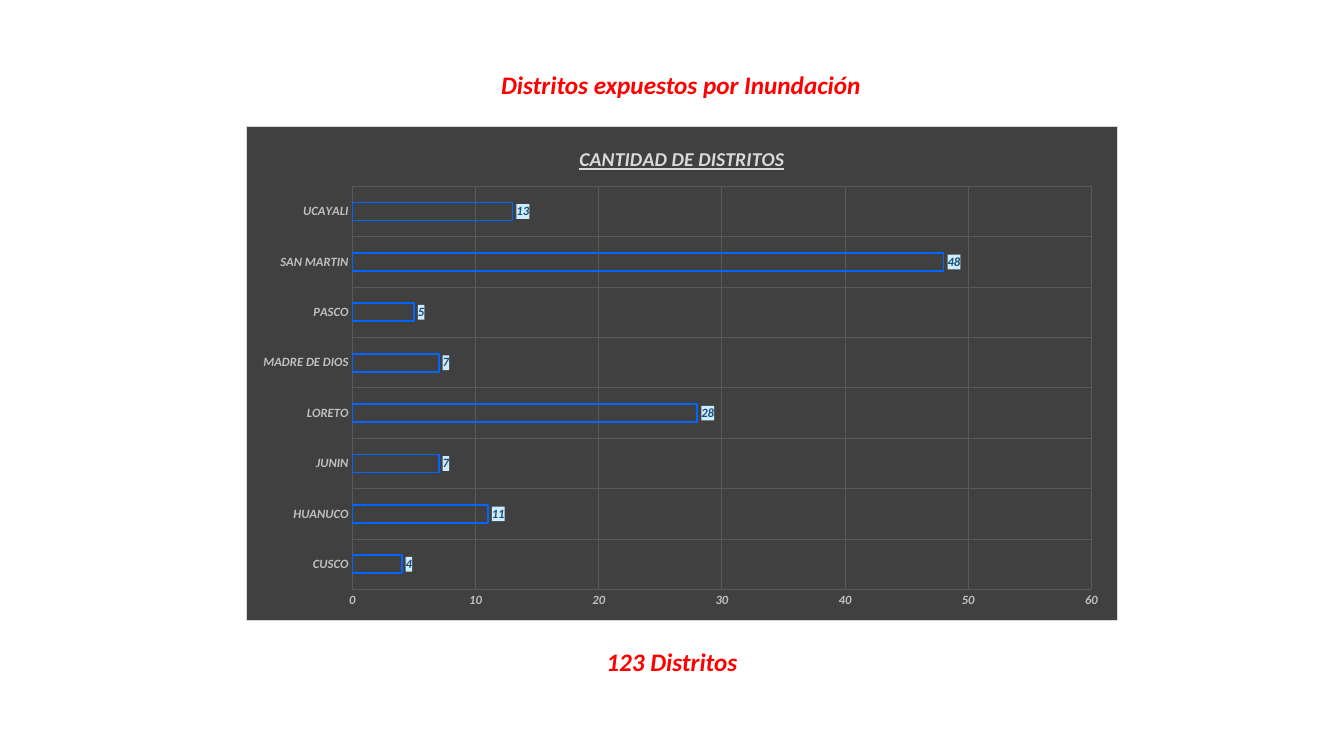
import pptx
import pptx.chart.data
import pptx.dml.color
import pptx.enum.chart
import pptx.enum.text
import pptx.oxml
import pptx.oxml.ns
import pptx.util

CHART_TITLE = "CANTIDAD DE DISTRITOS"
DISTRICTS = {
    "CUSCO": 4, "HUANUCO": 11, "JUNIN": 7, "LORETO": 28,
    "MADRE DE DIOS": 7, "PASCO": 5, "SAN MARTIN": 48, "UCAYALI": 13,
}
# text, (left, top, width, height) in px, wraps
HEADINGS = [
    ("Distritos expuestos por Inundación", (489, 64, 384, 40), False),
    ("123 Distritos", (596, 641, 152, 40), True),
]
CHART_BOX = (246, 126, 872, 495)
PLOT_BOX = (352, 186, 740, 404)
PAGE_SIZE = (1344, 756)
EMU_PER_PX = 914400 / 100.8

THEME = {
    "font": "Calibri",
    "heading": "FF0000", "heading_size": 18,
    "title": "D9D9D9", "title_size": 14,
    "axis": "BFBFBF", "small_size": 9, "chart_size": 10,
    "panel": "404040", "border": "D9D9D9", "grid": "595959",
    "bar": "0066FF", "value": "1F4E79", "value_back": "CCECFF",
}


def emu(px):
    return pptx.util.Emu(round(px * EMU_PER_PX))


def rgb(name):
    return pptx.dml.color.RGBColor.from_string(THEME[name])


def style_font(font, color, size):
    font.name = THEME["font"]
    font.size = pptx.util.Pt(THEME[size])
    font.bold = font.italic = True
    font.color.rgb = rgb(color)


def style_line(line, color, width):
    line.color.rgb = rgb(color)
    line.width = pptx.util.Pt(width)


def chart_xml(tag, content):
    return pptx.oxml.parse_xml(
        f"<c:{tag} {pptx.oxml.ns.nsdecls('c', 'a')}>{content}</c:{tag}>")


def solid(name):
    return f'<a:solidFill><a:srgbClr val="{THEME[name]}"/></a:solidFill>'


def add_heading(page, text, place, wraps):
    box = page.shapes.add_textbox(*map(emu, place))
    frame = box.text_frame
    frame.word_wrap = wraps
    frame.auto_size = pptx.enum.text.MSO_AUTO_SIZE.SHAPE_TO_FIT_TEXT
    para = frame.paragraphs[0]
    para.alignment = pptx.enum.text.PP_ALIGN.CENTER
    span = para.add_run()
    span.text = text
    style_font(span.font, "heading", "heading_size")


def style_axis(axis):
    axis.has_major_gridlines = True
    style_line(axis.major_gridlines.format.line, "grid", 0.75)
    axis.major_tick_mark = pptx.enum.chart.XL_TICK_MARK.NONE
    axis.minor_tick_mark = pptx.enum.chart.XL_TICK_MARK.NONE
    axis.format.line.fill.background()
    style_font(axis.tick_labels.font, "axis", "small_size")


def place_plot(chart):
    """Fix the inner plot area as fractions of the chart frame."""
    left, top, width, height = CHART_BOX
    x, y, plot_width, plot_height = PLOT_BOX
    shares = {"x": (x - left) / width, "y": (y - top) / height,
              "w": plot_width / width, "h": plot_height / height}
    modes = "".join(f'<c:{key}Mode val="edge"/>' for key in "xy")
    sizes = "".join(f'<c:{key} val="{share:.4f}"/>' for key, share in shares.items())
    area = chart.element.chart.plotArea
    for layout in area.findall(pptx.oxml.ns.qn("c:layout")):
        area.remove(layout)
    area.insert(0, chart_xml("layout", '<c:manualLayout><c:layoutTarget val="inner"/>'
                             f"{modes}{sizes}</c:manualLayout>"))


def style_series(plot):
    plot.gap_width, plot.overlap = 182, -50
    plot.vary_by_categories = False
    series = plot.series[0]
    series.invert_if_negative = False
    series.format.fill.background()
    style_line(series.format.line, "bar", 1.25)
    labels = series.data_labels
    labels.show_value = True
    labels.number_format, labels.number_format_is_linked = "#,##0", False
    labels.position = pptx.enum.chart.XL_LABEL_POSITION.OUTSIDE_END
    style_font(labels.font, "value", "small_size")
    text_part = series._element.find(".//" + pptx.oxml.ns.qn("c:dLbls")).find(
        pptx.oxml.ns.qn("c:txPr"))
    text_part.addprevious(chart_xml("spPr", solid("value_back")))


def add_district_chart(page):
    data = pptx.chart.data.CategoryChartData(number_format="#,##0")
    data.categories = list(DISTRICTS)
    data.add_series("Series 1", list(DISTRICTS.values()))
    chart = page.shapes.add_chart(
        pptx.enum.chart.XL_CHART_TYPE.BAR_CLUSTERED, *map(emu, CHART_BOX), data).chart
    chart.has_legend = False
    chart.font.name = THEME["font"]
    chart.font.size = pptx.util.Pt(THEME["chart_size"])

    chart.has_title = True
    span = chart.chart_title.text_frame.paragraphs[0].add_run()
    span.text = CHART_TITLE
    style_font(span.font, "title", "title_size")
    span.font.underline = True
    chart.chart_title.include_in_layout = False

    style_axis(chart.category_axis)
    style_axis(chart.value_axis)
    chart.value_axis.minimum_scale = 0
    chart.value_axis.maximum_scale = 60
    chart.value_axis.major_unit = 10
    style_series(chart.plots[0])
    place_plot(chart)
    border = f'<a:ln w="{pptx.util.Pt(0.75)}">{solid("border")}</a:ln>'
    chart.element.find(pptx.oxml.ns.qn("c:txPr")).addprevious(
        chart_xml("spPr", solid("panel") + border))


def main():
    deck = pptx.Presentation()
    deck.slide_width, deck.slide_height = map(emu, PAGE_SIZE)
    page = deck.slides.add_slide(deck.slide_layouts[6])
    for heading in HEADINGS:
        add_heading(page, *heading)
    add_district_chart(page)
    deck.save("out.pptx")


if __name__ == "__main__":
    main()
